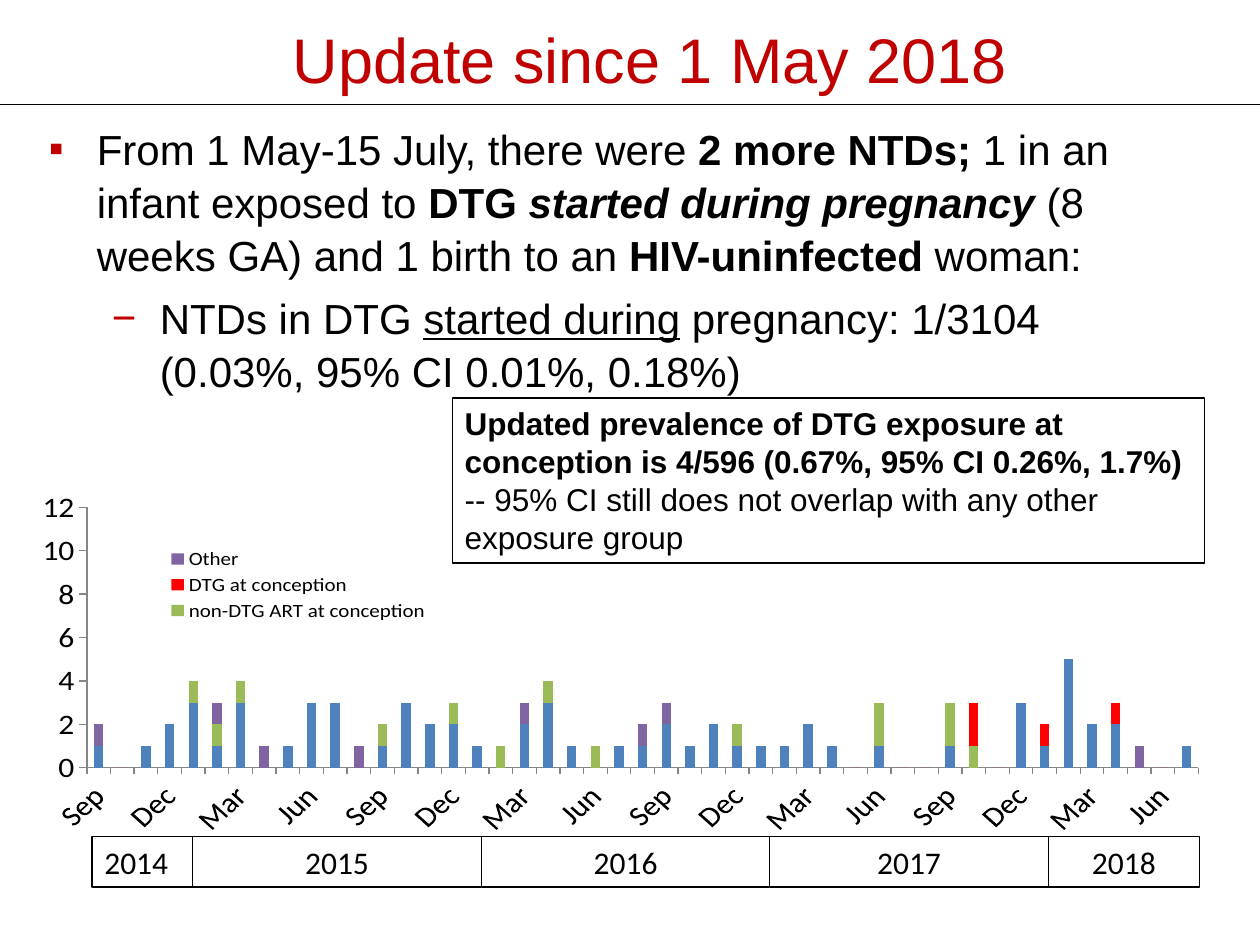
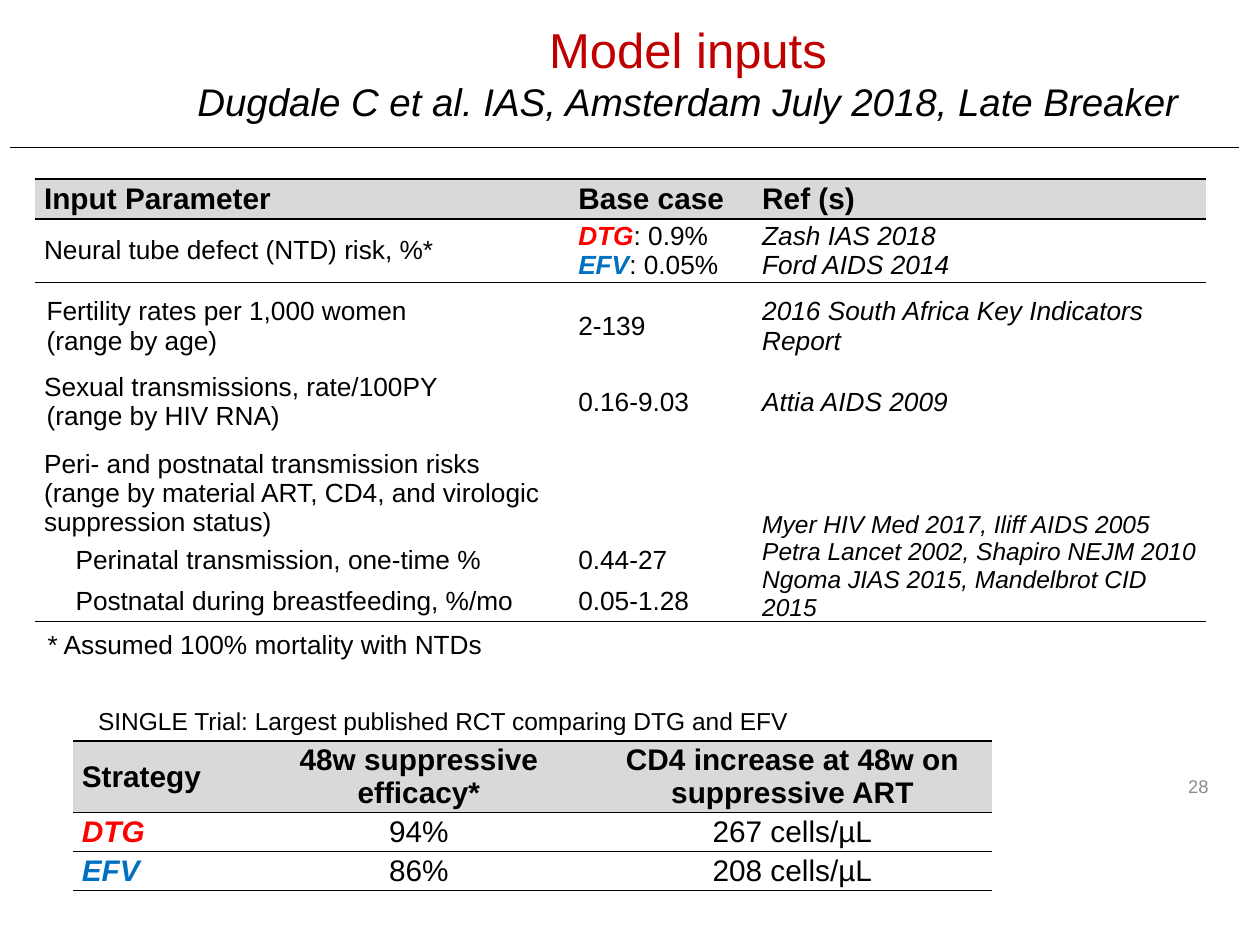
"""Build two slides: an update on neural tube defects and the inputs of a model."""
import itertools

import lxml.etree
import pptx
import pptx.chart.data
import pptx.dml.color
import pptx.enum.chart
import pptx.enum.shapes
import pptx.enum.text
import pptx.oxml
import pptx.oxml.ns
import pptx.util

Inches = pptx.util.Inches
Pt = pptx.util.Pt
RGBColor = pptx.dml.color.RGBColor
Align = pptx.enum.text.PP_ALIGN
Anchor = pptx.enum.text.MSO_ANCHOR
qn = pptx.oxml.ns.qn

BLACK = RGBColor(0, 0, 0)
CRIMSON = RGBColor(0xC0, 0, 0)
RED = RGBColor(0xFF, 0, 0)
BLUE = RGBColor(0, 0x70, 0xC0)
HEADER_GREY = RGBColor(0xD9, 0xD9, 0xD9)
NUMBER_GREY = RGBColor(0x8C, 0x8C, 0x8C)
AXIS_GREY = RGBColor(0x86, 0x86, 0x86)
BAR_BLUE = RGBColor(0x4F, 0x81, 0xBD)
BAR_GREEN = RGBColor(0x9B, 0xBB, 0x59)
BAR_PURPLE = RGBColor(0x80, 0x64, 0xA2)
DRUGS = {"DTG": RED, "EFV": BLUE}
PLAIN_TABLE = "{2D5ABB26-0587-4C30-8999-92F81FD0307C}"


def write(para, spans, size, color=BLACK, face="Arial"):
    """Add runs given as (text, style letters, optional colour)."""
    for text, style, *own_color in spans:
        span = para.add_run()
        span.text = text
        span.font.name = face
        span.font.size = Pt(size)
        span.font.bold = "b" in style
        span.font.italic = "i" in style
        span.font.underline = "u" in style
        span.font.color.rgb = own_color[0] if own_color else color


def add_box(page, place, anchor=Anchor.TOP, outlined=False):
    """Add a wrapping text box and return its text frame."""
    box = page.shapes.add_textbox(*map(Inches, place))
    if outlined:
        box.line.color.rgb = BLACK
        box.line.width = Pt(0.75)
    box.text_frame.word_wrap = True
    box.text_frame.vertical_anchor = anchor
    return box.text_frame


deck = pptx.Presentation()
deck.slide_width = Inches(10)
deck.slide_height = Inches(7.5)
update, inputs = [deck.slides.add_slide(deck.slide_layouts[6]) for _ in range(2)]

months = ["Sep", "Oct", "Nov", "Dec", "Jan", "Feb", "Mar", "Apr", "May", "Jun", "Jul", "Aug"]
series_data = [
    ("HIV neg", BAR_BLUE,
     [1, 0, 1, 2, 3, 1, 3, 0, 1, 3, 3, 0, 1, 3, 2, 2, 1, 0, 2, 3, 1, 0, 1, 1,
      2, 1, 2, 1, 1, 1, 2, 1, 0, 1, 0, 0, 1, 0, 0, 3, 1, 5, 2, 2, 0, 0, 1]),
    ("non-DTG ART at conception", BAR_GREEN,
     [0, 0, 0, 0, 1, 1, 1, 0, 0, 0, 0, 0, 1, 0, 0, 1, 0, 1, 0, 1, 0, 1, 0, 0,
      0, 0, 0, 1, 0, 0, 0, 0, 0, 2, 0, 0, 2, 1, 0, 0, 0, 0, 0, 0, 0, 0, 0]),
    ("DTG at conception", RED,
     [0, 0, 0, 0, 0, 0, 0, 0, 0, 0, 0, 0, 0, 0, 0, 0, 0, 0, 0, 0, 0, 0, 0, 0,
      0, 0, 0, 0, 0, 0, 0, 0, 0, 0, 0, 0, 0, 2, 0, 0, 1, 0, 0, 1, 0, 0, 0]),
    ("Other", BAR_PURPLE,
     [1, 0, 0, 0, 0, 1, 0, 1, 0, 0, 0, 1, 0, 0, 0, 0, 0, 0, 1, 0, 0, 0, 0, 1,
      1, 0, 0, 0, 0, 0, 0, 0, 0, 0, 0, 0, 0, 0, 0, 0, 0, 0, 0, 0, 1, 0, 0]),
]
births = pptx.chart.data.CategoryChartData(number_format="General")
births.categories = itertools.islice(itertools.cycle(months), 47)
for name, color, counts in series_data:
    births.add_series(name, counts)
chart = update.shapes.add_chart(
    pptx.enum.chart.XL_CHART_TYPE.COLUMN_STACKED,
    *map(Inches, (0.21, 3.89, 9.59, 2.75)), births).chart
chart.has_title = False
chart.font.name = "Calibri"
chart.font.size = Pt(18)
chart.font.color.rgb = BLACK
plot = chart.plots[0]
plot.gap_width = 150
plot.overlap = 100
plot.vary_by_categories = False
for series, (name, color, counts) in zip(plot.series, series_data):
    series.format.fill.solid()
    series.format.fill.fore_color.rgb = color
for axis in (chart.category_axis, chart.value_axis):
    axis.has_major_gridlines = False
    axis.major_tick_mark = pptx.enum.chart.XL_TICK_MARK.OUTSIDE
    axis.minor_tick_mark = pptx.enum.chart.XL_TICK_MARK.NONE
    axis.format.line.color.rgb = AXIS_GREY
    axis.tick_labels.font.size = Pt(18)
chart.value_axis.minimum_scale = 0
chart.value_axis.maximum_scale = 12
chart.value_axis.major_unit = 2
month_axis = chart.category_axis._element
month_axis.find(qn("c:txPr")).find(qn("a:bodyPr")).set("rot", "-2700000")
skip = lxml.etree.Element(qn("c:tickLblSkip"), val="3")
month_axis.find(qn("c:noMultiLvlLbl")).addprevious(skip)
chart.has_legend = True
chart.legend.position = pptx.enum.chart.XL_LEGEND_POSITION.RIGHT
chart.legend.include_in_layout = False
chart.legend.font.size = Pt(12)

plot_area = chart._chartSpace.chart.plotArea
legend = chart.legend._element
for parent, target, fractions in (
        (plot_area, "inner", (0.05, 0.04, 0.92, 0.84)),
        (legend, None, (0.1, 0.16, 0.25, 0.26))):
    for unused in parent.findall(qn("c:layout")):
        parent.remove(unused)
    layout = lxml.etree.Element(qn("c:layout"))
    manual = lxml.etree.SubElement(layout, qn("c:manualLayout"))
    if target:
        lxml.etree.SubElement(manual, qn("c:layoutTarget"), val=target)
    for side in "xy":
        lxml.etree.SubElement(manual, qn(f"c:{side}Mode"), val="edge")
    for side, fraction in zip("xywh", fractions):
        lxml.etree.SubElement(manual, qn(f"c:{side}"), val=str(fraction))
    if target:
        parent.insert(0, layout)
    else:
        parent.find(qn("c:legendPos")).addnext(layout)

year_edges = [0.73, 1.53, 3.82, 6.11, 8.32, 9.52]
for year, (left, right) in enumerate(itertools.pairwise(year_edges), 2014):
    para = add_box(update, (left, 6.64, right - left, 0.4), outlined=True).paragraphs[0]
    para.alignment = Align.LEFT if year == 2014 else Align.CENTER
    write(para, [(str(year), "")], 18, face="Calibri")

bullets = [
    ("▪", 0.38, 0, [
        ("From 1 May-15 July, there were ", ""), ("2 more NTDs; ", "b"),
        ("1 in an infant exposed to ", ""), ("DTG ", "b"),
        ("started during pregnancy ", "bi"), ("(8 weeks GA) and 1 birth to an ", ""),
        ("HIV-uninfected ", "b"), ("woman:", "")]),
    ("−", 0.88, 6, [
        ("NTDs in DTG ", ""), ("started during", "u"),
        (" pregnancy: 1/3104 (0.03%, 95% CI 0.01%, 0.18%)", "")]),
]
frame = add_box(update, (0.29, 0.91, 9.27, 2.28))
for number, (mark, indent, space, spans) in enumerate(bullets):
    para = frame.add_paragraph() if number else frame.paragraphs[0]
    props = para._p.get_or_add_pPr()
    props.set("marL", str(Inches(indent)))
    props.set("indent", str(Inches(-0.38)))
    bullet_color = lxml.etree.SubElement(props, qn("a:buClr"))
    lxml.etree.SubElement(bullet_color, qn("a:srgbClr"), val=str(CRIMSON))
    lxml.etree.SubElement(props, qn("a:buFont"), typeface="Arial")
    lxml.etree.SubElement(props, qn("a:buChar"), char=mark)
    para.line_spacing = 1.05
    if space:
        para.space_before = Pt(space)
    write(para, spans, 24)

para = add_box(update, (0.16, -0.06, 10, 1.05), Anchor.MIDDLE).paragraphs[0]
para.alignment = Align.CENTER
write(para, [("Update since 1 May 2018", "")], 36, CRIMSON)
effects = lxml.etree.Element(qn("a:effectLst"))
shadow = lxml.etree.SubElement(effects, qn("a:outerShdw"), blurRad="38100",
                               dist="38100", dir="2700000", algn="tl")
shade = lxml.etree.SubElement(shadow, qn("a:srgbClr"), val="000000")
lxml.etree.SubElement(shade, qn("a:alpha"), val="43000")
para.runs[0].font._element.find(qn("a:latin")).addprevious(effects)

frame = add_box(update, (3.59, 3.16, 5.97, 1.31), outlined=True)
write(frame.paragraphs[0], [("Updated prevalence of DTG exposure at conception is "
                             "4/596 (0.67%, 95% CI 0.26%, 1.7%)", "b")], 18)
write(frame.add_paragraph(), [("-- 95% CI still does not overlap with any other "
                               "exposure group", "")], 18)

for page, start, end, height in ((update, 0, 10.08, 0.83), (inputs, 0.08, 9.83, 1.17)):
    rule = page.shapes.add_connector(
        pptx.enum.shapes.MSO_CONNECTOR.STRAIGHT,
        Inches(start), Inches(height), Inches(end), Inches(height))
    rule.line.color.rgb = BLACK
    rule.line.width = Pt(0.75)
    lxml.etree.SubElement(rule._element.spPr, qn("a:effectLst"))

para = add_box(inputs, (1.39, -0.1, 8.14, 1.34), Anchor.MIDDLE).paragraphs[0]
para.alignment = Align.CENTER
write(para, [("Model inputs", "")], 28, CRIMSON)
para.add_line_break()
write(para, [("Dugdale C et al. IAS, Amsterdam July 2018, Late Breaker", "i")], 22)

for text, size, color, align, place in (
        ("28", 10.5, NUMBER_GREY, Align.RIGHT, (9.11, 6.1, 0.58, 0.26)),
        ("* Assumed 100% mortality with NTDs", 15, BLACK, Align.LEFT,
         (0.28, 4.94, 9.22, 0.35)),
        ("SINGLE Trial: Largest published RCT comparing DTG and EFV", 14, BLACK,
         Align.LEFT, (0.68, 5.55, 9.3, 0.41))):
    para = add_box(inputs, place).paragraphs[0]
    para.alignment = align
    write(para, [(text, "")], size, color)

spacer = ["", "", ""]
parameter_rows = [
    ["Input Parameter", "Base case", "Ref (s)"],
    ["Neural tube defect (NTD) risk, %*", "DTG: 0.9%\nEFV: 0.05%",
     "Zash IAS 2018\nFord AIDS 2014"],
    spacer,
    ["Fertility rates per 1,000 women\n(range by age)", "2-139",
     "2016 South Africa Key Indicators Report"],
    spacer,
    ["Sexual transmissions, rate/100PY\n(range by HIV RNA)", "0.16-9.03",
     "Attia AIDS 2009"],
    spacer,
    ["Peri- and postnatal transmission risks (range by material ART, CD4, "
     "and virologic suppression status)", "",
     "Myer HIV Med 2017, Iliff AIDS 2005\nPetra Lancet 2002, Shapiro NEJM 2010\n"
     "Ngoma JIAS 2015, Mandelbrot CID 2015"],
    ["Perinatal transmission, one-time %", "0.44-27", ""],
    ["Postnatal during breastfeeding, %/mo", "0.05-1.28", ""],
]
strategy_rows = [
    ["Strategy", "48w suppressive efficacy*", "CD4 increase at 48w on suppressive ART"],
    ["DTG", "94%", "267 cells/µL"],
    ["EFV", "86%", "208 cells/µL"],
    spacer,
]
indents = {"Fertility": 0.02, "(range": 0.02, "Perinatal": 0.25, "Postnatal": 0.25}
tables = [
    (0.28, 1.42, [4.24, 1.46, 3.59], [0.32] + [0.5, 0.1] * 3 + [0.75, 0.32, 0.32],
     parameter_rows, 15, Align.LEFT, "i", 9),
    (0.58, 5.88, [1.36, 2.77, 3.16], [0.52, 0.31, 0.31, 0.09],
     strategy_rows, 17, Align.CENTER, "", 2),
]
for left, top, widths, heights, rows, body_size, align, last_style, end_row in tables:
    table = inputs.shapes.add_table(
        len(rows), len(widths), Inches(left), Inches(top),
        Inches(sum(widths)), Inches(sum(heights))).table
    table._tbl.tblPr.find(qn("a:tableStyleId")).text = PLAIN_TABLE
    for column, width in zip(table.columns, widths):
        column.width = Inches(width)
    for row, height in zip(table.rows, heights):
        row.height = Inches(height)
    if rows is parameter_rows:
        table.cell(7, 2).merge(table.cell(9, 2))
    for r, c in itertools.product(range(len(rows)), range(len(widths))):
        cell = table.cell(r, c)
        cell.margin_left = cell.margin_right = Inches(0.07)
        cell.margin_top = cell.margin_bottom = 0
        cell.vertical_anchor = Anchor.BOTTOM if cell.is_merge_origin else Anchor.MIDDLE
        edges = {0: ["lnT", "lnB"], 1: ["lnT"], end_row: ["lnB"]}.get(r, [])
        if cell.is_merge_origin:
            edges = ["lnB"]
        for edge in edges:
            line = lxml.etree.SubElement(cell._tc.get_or_add_tcPr(), qn(f"a:{edge}"),
                                         w=str(Pt(1)))
            ink = lxml.etree.SubElement(line, qn("a:solidFill"))
            lxml.etree.SubElement(ink, qn("a:srgbClr"), val=str(BLACK))
        if r == 0:
            cell.fill.solid()
            cell.fill.fore_color.rgb = HEADER_GREY
        else:
            cell.fill.background()
        size = 17 if r == 0 else 14 if cell.is_merge_origin else body_size
        style = "b" if r == 0 else last_style if c == 2 else ""
        for number, text in enumerate(rows[r][c].split("\n")):
            para = cell.text_frame.add_paragraph() if number else cell.text_frame.paragraphs[0]
            para.alignment = align if c else Align.LEFT
            indent = indents.get(text.split(" ")[0], 0)
            para._p.get_or_add_pPr().set("marL", str(Inches(indent)))
            drug, rest = text[:3], text[3:]
            if not text:
                lxml.etree.SubElement(para._p, qn("a:endParaRPr"), sz="400")
            elif drug in DRUGS:
                write(para, [(drug, "bi", DRUGS[drug])], size)
                write(para, [(rest, "")] if rest else [], size)
            else:
                write(para, [(text, style)], size)

deck.save("out.pptx")
